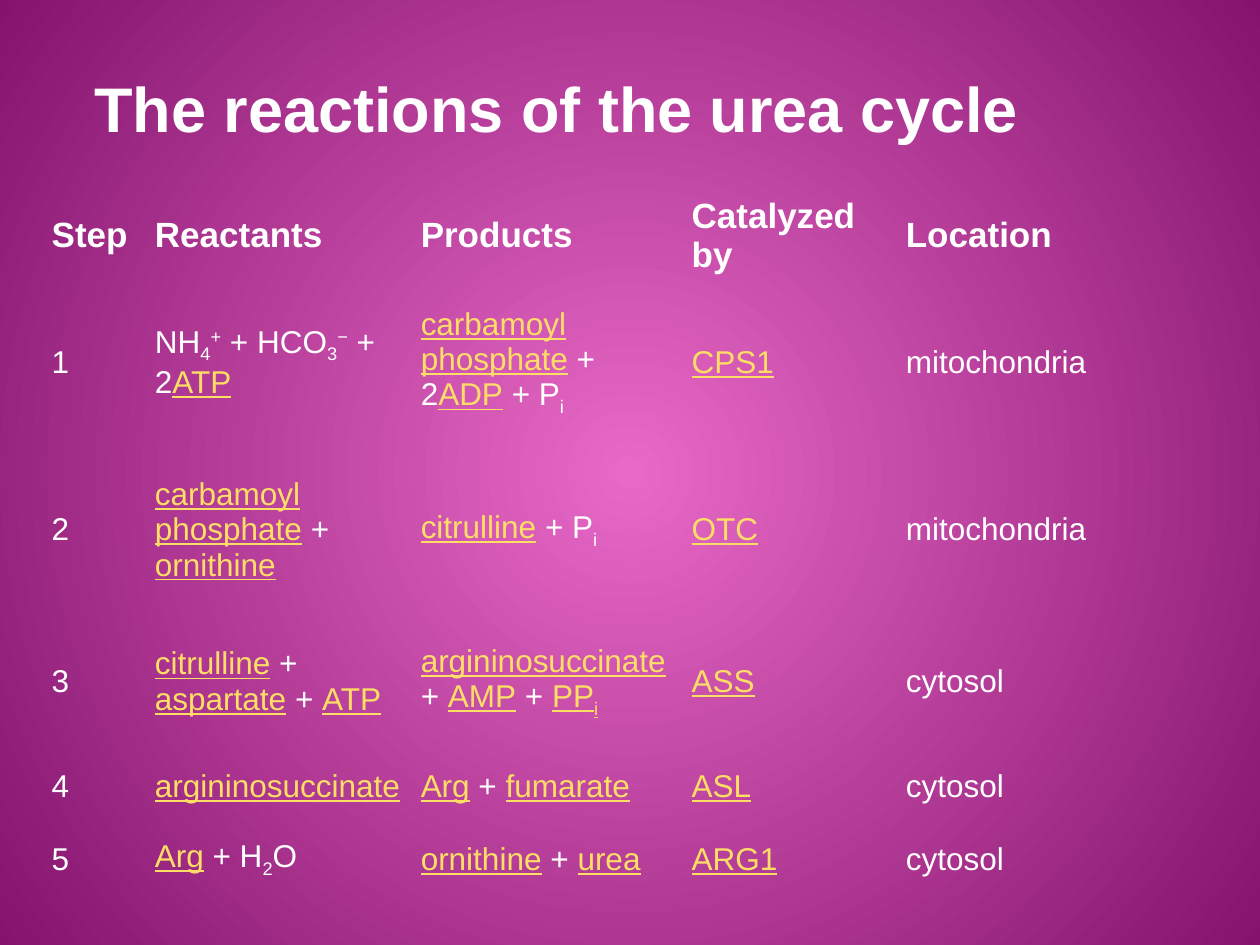
from itertools import groupby

from lxml import etree
from pptx import Presentation
from pptx.dml.color import RGBColor
from pptx.enum.text import MSO_ANCHOR, MSO_AUTO_SIZE, PP_ALIGN
from pptx.oxml.ns import qn
from pptx.util import Inches, Pt

WHITE = RGBColor(0xFF, 0xFF, 0xFF)
YELLOW = RGBColor(0xFF, 0xDE, 0x66)
PINK = RGBColor(0xE8, 0x69, 0xC7)
PURPLE = RGBColor(0x84, 0x14, 0x6D)
NO_GRID_STYLE = "{2D5ABB26-0587-4C30-8999-92F81FD0307C}"

COLUMN_WIDTHS = [0.82, 2.11, 2.15, 1.7, 1.7]
ROW_HEIGHTS = [0.58, 1.33, 1.33, 1.08, 0.58, 0.58]
# [term] is a highlighted term, _x a subscript and ^x a superscript.
REACTIONS = [
    ["Step", "Reactants", "Products", "Catalyzed by", "Location"],
    ["1", "NH_4^+ + HCO_3^− + 2[ATP]", "[carbamoyl phosphate] + 2[ADP] + P_i",
     "[CPS1]", "mitochondria"],
    ["2", "[carbamoyl phosphate] + [ornithine]", "[citrulline] + P_i",
     "[OTC]", "mitochondria"],
    ["3", "[citrulline] + [aspartate] + [ATP]",
     "[argininosuccinate] + [AMP] + [PP_i]", "[ASS]", "cytosol"],
    ["4", "[argininosuccinate]", "[Arg] + [fumarate]", "[ASL]", "cytosol"],
    ["5", "[Arg] + H_2O", "[ornithine] + [urea]", "[ARG1]", "cytosol"],
]


def parse_markup(markup):
    """Yield (text, highlighted, baseline) for each run of the markup."""
    marked = []
    highlighted, baseline = False, 0
    for char in markup:
        if char in "[]":
            highlighted = char == "["
        elif char in "_^":
            baseline = -25000 if char == "_" else 30000
        else:
            marked.append((char, highlighted, baseline))
            baseline = 0
    for (highlight, base), chars in groupby(marked, key=lambda item: item[1:]):
        yield "".join(item[0] for item in chars), highlight, base


def write_text(frame, markup, size=18, bold=False, color=WHITE):
    paragraph = frame.paragraphs[0]
    paragraph.alignment = PP_ALIGN.LEFT
    for text, highlighted, baseline in parse_markup(markup):
        run = paragraph.add_run()
        run.text = text
        font = run.font
        font.name = "Arial"
        font.size = Pt(size)
        font.bold = bold
        font.color.rgb = YELLOW if highlighted else color
        if highlighted:
            font.underline = True
        if baseline:
            run._r.get_or_add_rPr().set("baseline", str(baseline))


def paint_background(slide):
    """Fill the background with a circular gradient around the centre."""
    fill = slide.background.fill
    fill.gradient()
    for stop, position, color in zip(fill.gradient_stops, (0, 1), (PINK, PURPLE)):
        stop.position = position
        stop.color.rgb = color
    gradient = slide.background._cSld.find(".//" + qn("a:gradFill"))
    linear = gradient.find(qn("a:lin"))
    circle = etree.Element(qn("a:path"), {"path": "circle"})
    etree.SubElement(circle, qn("a:fillToRect"),
                     {side: "50000" for side in "ltrb"})
    gradient.replace(linear, circle)


def add_title(slide, text):
    title = slide.shapes.title
    title.left, title.top = Inches(-0.35), Inches(0.2)
    title.width, title.height = Inches(8.69), Inches(1.31)
    frame = title.text_frame
    frame.word_wrap = True
    frame.auto_size = MSO_AUTO_SIZE.NONE
    frame.vertical_anchor = MSO_ANCHOR.MIDDLE
    frame.margin_left = Inches(1.1)
    write_text(frame, text, size=36, bold=True)


def add_reaction_table(slide):
    table = slide.shapes.add_table(
        len(ROW_HEIGHTS), len(COLUMN_WIDTHS), Inches(0.34), Inches(1.53),
        Inches(sum(COLUMN_WIDTHS)), Inches(sum(ROW_HEIGHTS))).table
    table.first_row = table.horz_banding = False
    table._tbl.tblPr.find(qn("a:tableStyleId")).text = NO_GRID_STYLE
    for column, width in zip(table.columns, COLUMN_WIDTHS):
        column.width = Inches(width)
    for row, height in zip(table.rows, ROW_HEIGHTS):
        row.height = Inches(height)
    for row_index, reaction in enumerate(REACTIONS):
        header = row_index == 0
        for column_index, markup in enumerate(reaction):
            cell = table.cell(row_index, column_index)
            cell.fill.background()
            cell.vertical_anchor = MSO_ANCHOR.MIDDLE
            cell.margin_left = cell.margin_right = Inches(0.07)
            cell.margin_top = cell.margin_bottom = Inches(0.03)
            write_text(cell.text_frame, markup,
                       size=20 if header else 18, bold=header)


def main():
    presentation = Presentation()
    presentation.slide_width = Inches(10)
    presentation.slide_height = Inches(7.5)
    slide = presentation.slides.add_slide(presentation.slide_layouts[5])
    paint_background(slide)
    add_reaction_table(slide)
    add_title(slide, "The reactions of the urea cycle")
    presentation.save("out.pptx")


if __name__ == "__main__":
    main()
